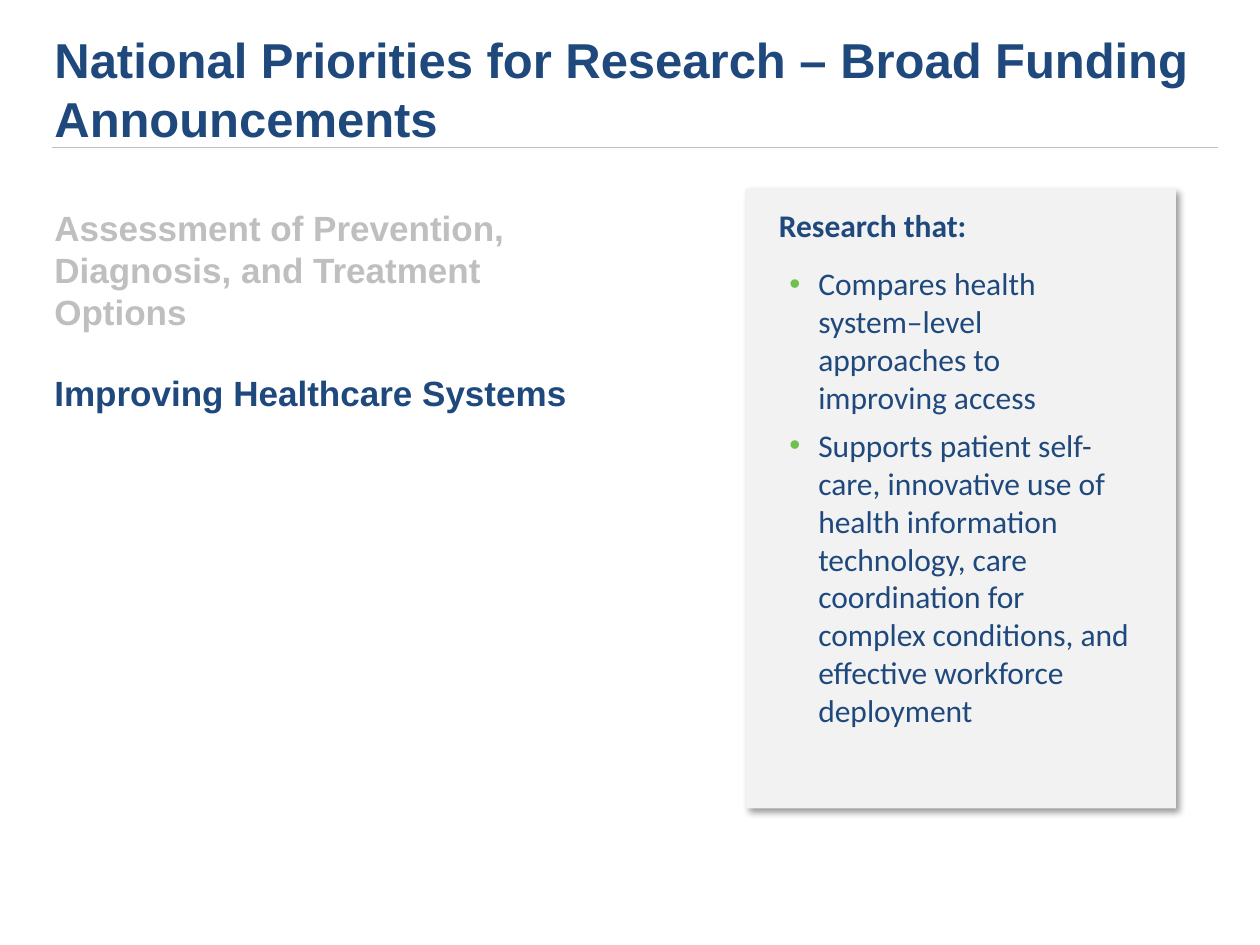
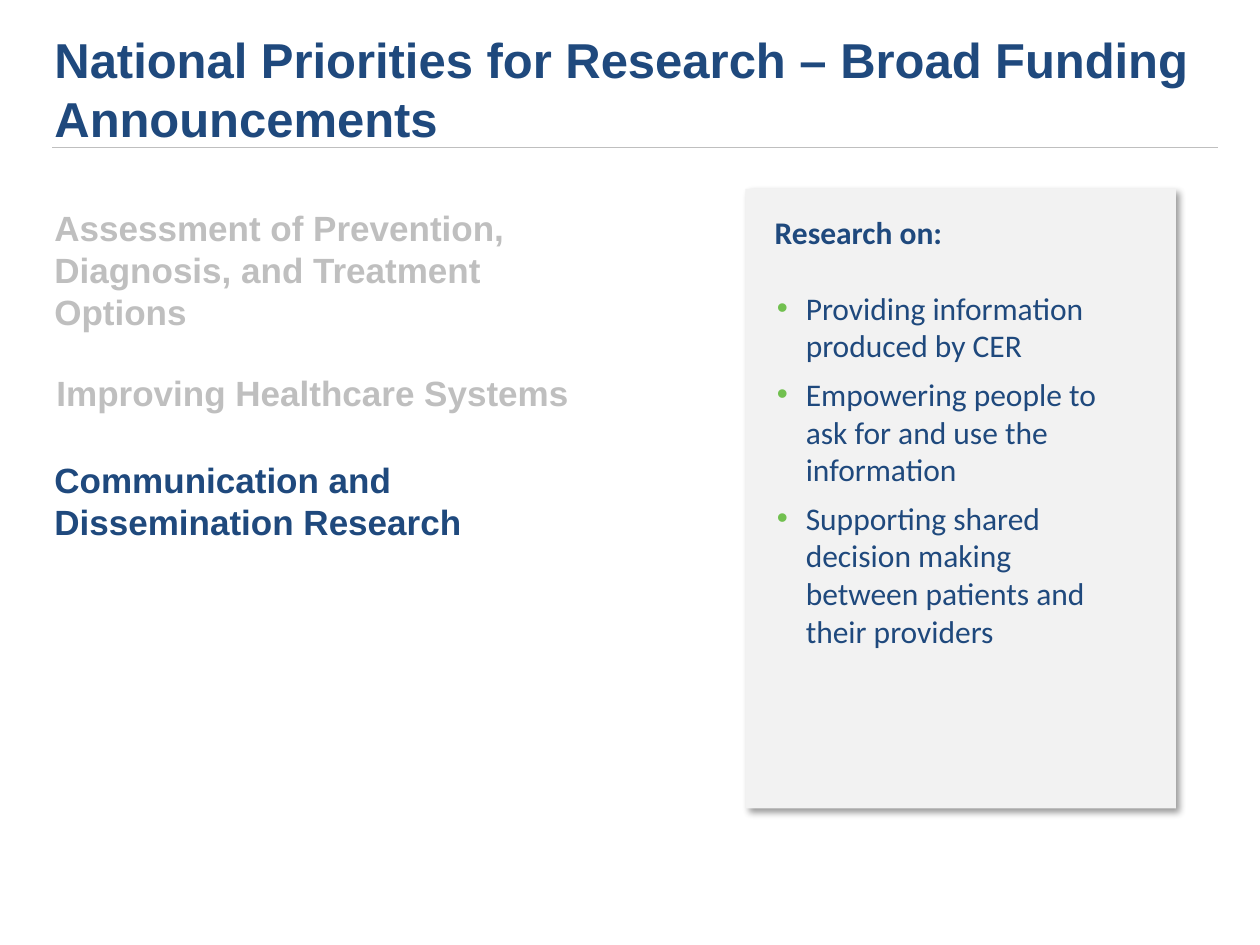
from lxml import etree
from pptx import Presentation
from pptx.dml.color import RGBColor as Rgb
from pptx.enum.shapes import MSO_CONNECTOR as Link, MSO_SHAPE as Shape
from pptx.enum.text import MSO_ANCHOR as Anchor, MSO_AUTO_SIZE as Fit
from pptx.oxml.ns import qn
from pptx.util import Inches, Pt

HUES = {"navy": "1F497D", "gray": "BFBFBF", "pale": "F2F2F2",
        "green": "71C04F", "black": "000000"}
FONTS = {
    "title": {"name": "Arial", "size": Pt(28), "bold": True},
    "topic": {"name": "Arial", "size": Pt(20), "bold": True},
    "lead": {"name": "Calibri", "size": Pt(18), "bold": True},
    "point": {"name": "Calibri", "size": Pt(18), "bold": False},
}
COLS, ROWS = 120, 90
TITLE = "National Priorities for Research – Broad Funding Announcements"

# Text, top row and number of lines of each topic
TOPICS = [
    ("Assessment of Prevention, Diagnosis, and Treatment Options", 19.1, 3),
    ("Improving Healthcare Systems", 34.8, 1),
    ("Communication and Dissemination Research", 43.1, 2),
]
# Lead line and points of each slide, with their boxes in grid units
PAGES = [
    {"topics": 2,
     "lead": ("Research that:", (73, 19, 39, 4.8)),
     "points": ([
         "Compares health system–level approaches to improving access",
         "Supports patient self-care, innovative use of health information "
         "technology, care coordination for complex conditions, and "
         "effective workforce deployment"], (74, 24.6, 35, 45.8))},
    {"topics": 3,
     "lead": ("Research on:", (72.6, 19.7, 39, 4.8)),
     "points": ([
         "Providing information produced by CER",
         "Empowering people to ask for and use the information",
         "Supporting shared decision making between patients and their "
         "providers"], (72.8, 26.9, 35.9, 36))},
]


def put(obj, vals):
    for key, val in vals.items():
        setattr(obj, key, val)


def sub(node, tag, **attrs):
    """Append a DrawingML element to node."""
    return etree.SubElement(node, qn("a:" + tag), attrs)


class Deck:
    def __init__(self):
        self.prs = Presentation()
        put(self.prs, {"slide_width": Inches(10), "slide_height": Inches(7.5)})
        self.slide = None

    def page(self):
        self.slide = self.prs.slides.add_slide(self.prs.slide_layouts[6])

    def grid(self, *units):
        """Turn alternating columns and rows into lengths."""
        steps = (self.prs.slide_width / COLS, self.prs.slide_height / ROWS)
        return [round(u * steps[i % 2]) for i, u in enumerate(units)]

    def text(self, lines, box, kind, hue="navy", fit=Fit.SHAPE_TO_FIT_TEXT,
             dots=False):
        frame = self.slide.shapes.add_textbox(*self.grid(*box)).text_frame
        put(frame, {"word_wrap": True, "auto_size": fit,
                    "vertical_anchor": Anchor.TOP})
        for i, line in enumerate(lines):
            par = frame.paragraphs[0] if i == 0 else frame.add_paragraph()
            if dots:
                self.dot(par)
            run = par.add_run()
            run.text = line
            put(run.font, FONTS[kind])
            run.font.color.rgb = Rgb.from_string(HUES[hue])

    def dot(self, par):
        par.space_after = Pt(6)
        props = par._p.get_or_add_pPr()
        hang = Inches(0.23)
        props.set("marL", str(hang))
        props.set("indent", str(-hang))
        sub(sub(props, "buClr"), "srgbClr", val=HUES["green"])
        sub(props, "buFont", typeface="Arial")
        sub(props, "buChar", char="•")
        sub(sub(props, "tabLst"), "tab", pos=str(Inches(0.38)), algn="l")

    def rule(self, *ends):
        line = self.slide.shapes.add_connector(Link.STRAIGHT, *self.grid(*ends))
        line.line.width = Pt(0.25)
        line.line.color.rgb = Rgb.from_string(HUES["gray"])
        sub(line._element.spPr, "effectLst")

    def panel(self, *box):
        """Draw a pale rectangle with a soft shadow to the lower right."""
        rect = self.slide.shapes.add_shape(Shape.RECTANGLE, *self.grid(*box))
        rect.fill.solid()
        rect.fill.fore_color.rgb = Rgb.from_string(HUES["pale"])
        rect.line.fill.background()
        rect.shadow.inherit = False
        glow = sub(rect._element.spPr.find(qn("a:effectLst")), "outerShdw",
                   blurRad=str(Pt(4)), dist=str(Pt(3)), dir=str(45 * 60000),
                   algn="tl", rotWithShape="0")
        sub(sub(glow, "srgbClr", val=HUES["black"]), "alpha", val="40000")

    def topics(self, count):
        """List the topics so far, with the last one lit."""
        for i, (line, top, rows) in enumerate(TOPICS[:count], 1):
            hue = "navy" if i == count else "gray"
            left = 4.2 if i == 2 and hue == "gray" else 4
            self.text([line], (left, top, 54.7, 1.2 + 4 * rows), "topic", hue)


def main():
    deck = Deck()
    for page in PAGES:
        deck.page()
        deck.text([TITLE], (4, 2.25, 111, 9), "title", fit=Fit.NONE)
        deck.rule(5, 14, 116, 14)
        deck.topics(page["topics"])
        deck.panel(71, 18, 41, 59)
        lead, box = page["lead"]
        deck.text([lead], box, "lead")
        points, box = page["points"]
        deck.text(points, box, "point", dots=True)
    deck.prs.save("out.pptx")


if __name__ == "__main__":
    main()
